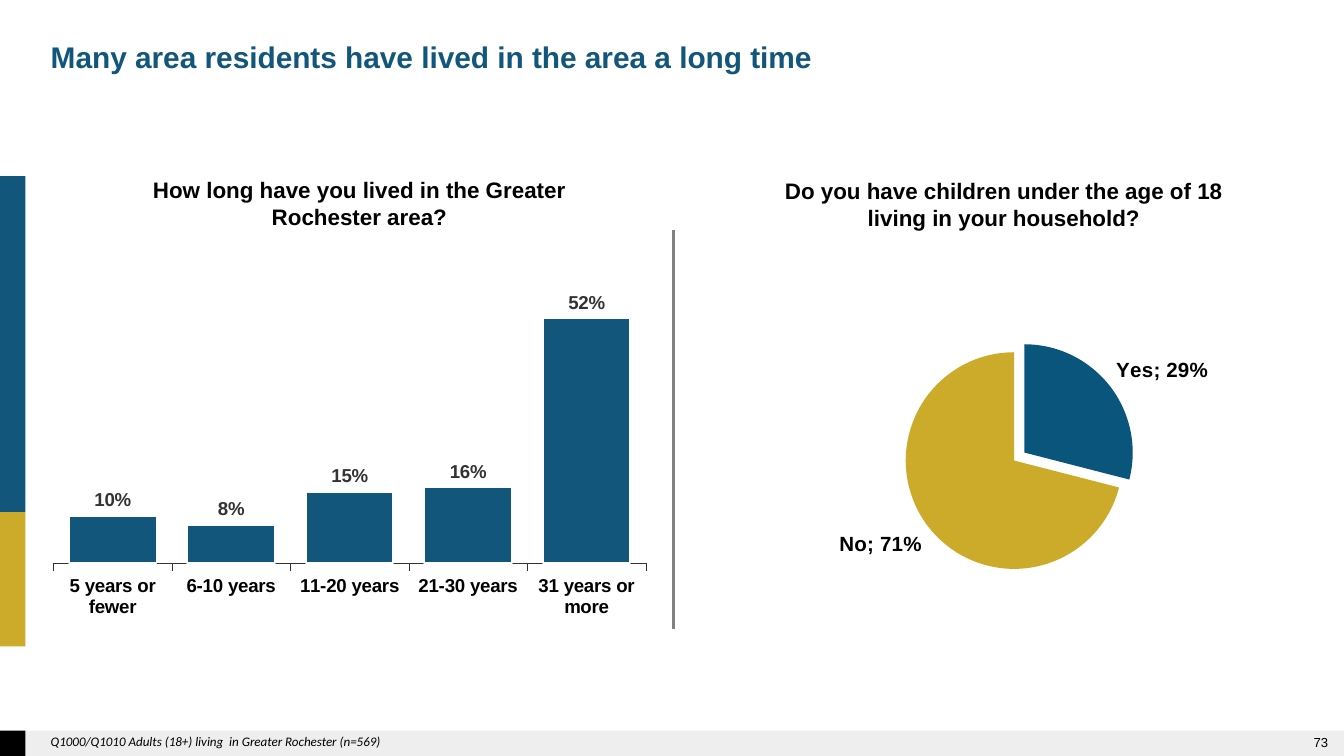
from lxml import etree
from pptx import Presentation
from pptx.chart.data import CategoryChartData
from pptx.dml.color import RGBColor
from pptx.enum.chart import XL_CHART_TYPE as ChartType, XL_LABEL_POSITION as LabelPosition
from pptx.enum.chart import XL_TICK_MARK as TickMark
from pptx.enum.shapes import MSO_CONNECTOR as Connector, MSO_SHAPE as Shape
from pptx.enum.text import MSO_ANCHOR as Anchor, PP_ALIGN as Align
from pptx.oxml import parse_xml
from pptx.oxml.ns import nsdecls, qn
from pptx.util import Cm, Pt

COLORS = {
    "blue": "12567C",
    "pie blue": "09557C",
    "gold": "CCAB2B",
    "black": "000000",
    "white": "FFFFFF",
    "dark gray": "333333",
    "footer": "595959",
    "divider": "808080",
}


class SlideBuilder:
    """Holds the style and the current slide, and draws each kind of element."""

    def __init__(self, slide, font="Arial"):
        self.slide = slide
        self.font = font

    def color(self, name):
        return RGBColor.from_string(COLORS[name])

    def paint(self, fill, name):
        fill.solid()
        fill.fore_color.rgb = self.color(name)

    def style(self, font, size, color="black", bold=False, italic=False, name=None):
        font.name = name or self.font
        font.size = Pt(size)
        font.bold = bold
        font.italic = italic
        font.color.rgb = self.color(color)

    def box(self, left, top, width, height, color, opacity=None):
        shape = self.slide.shapes.add_shape(
            Shape.RECTANGLE, Cm(left), Cm(top), Cm(width), Cm(height))
        shape.shadow.inherit = False
        shape.line.fill.background()
        self.paint(shape.fill, color)
        if opacity:
            tint = shape.fill._xPr.find(f".//{qn('a:srgbClr')}")
            etree.SubElement(tint, qn("a:alpha")).set("val", str(opacity * 1000))

    def text(self, words, left, top, width, height, size,
             align=Align.LEFT, anchor=Anchor.TOP, **style):
        shape = self.slide.shapes.add_textbox(Cm(left), Cm(top), Cm(width), Cm(height))
        frame = shape.text_frame
        frame.word_wrap = True
        frame.vertical_anchor = anchor
        paragraph = frame.paragraphs[0]
        paragraph.text = words
        paragraph.alignment = align
        self.style(paragraph.font, size, **style)

    def divider(self, x, top, bottom):
        line = self.slide.shapes.add_connector(
            Connector.STRAIGHT, Cm(x), Cm(top), Cm(x), Cm(bottom))
        line.line.color.rgb = self.color("divider")
        line.line.width = Pt(2)
        etree.SubElement(line._element.spPr, qn("a:effectLst"))

    def chart(self, kind, shares, place, plot_area, label_size, label_color):
        data = CategoryChartData(number_format="0%")
        data.categories = list(shares)
        data.add_series("Series 1", list(shares.values()))
        frame = self.slide.shapes.add_chart(kind, *map(Cm, place), data)
        chart = frame.chart
        chart.has_legend = False
        chart.has_title = False
        self.style(chart.font, label_size, label_color, bold=True)
        self.place_plot(chart, plot_area)
        series = chart.plots[0].series[0]
        labels = series.data_labels
        labels.show_value = True
        labels.number_format = "0%"
        labels.number_format_is_linked = False
        labels.position = LabelPosition.OUTSIDE_END
        self.style(labels.font, label_size, label_color, bold=True)
        return chart, series, labels

    def place_plot(self, chart, plot_area):
        area = chart._chartSpace.chart.plotArea
        for layout in area.findall(qn("c:layout")):
            area.remove(layout)
        sizes = "".join(f'<c:{key} val="{value}"/>' for key, value in zip("xywh", plot_area))
        area.insert(0, parse_xml(
            f'<c:layout {nsdecls("c")}><c:manualLayout><c:layoutTarget val="inner"/>'
            f'<c:xMode val="edge"/><c:yMode val="edge"/>{sizes}'
            '</c:manualLayout></c:layout>'))

    def column_chart(self, shares, place, plot_area):
        chart, series, _ = self.chart(
            ChartType.COLUMN_CLUSTERED, shares, place, plot_area, 10, "dark gray")
        chart.plots[0].gap_width = 35
        chart.plots[0].vary_by_categories = False
        self.paint(series.format.fill, "blue")
        series.format.line.color.rgb = self.color("white")
        series.format.line.width = Pt(1)
        values = chart.value_axis
        values.minimum_scale, values.maximum_scale, values.major_unit = 0, 0.6, 0.25
        values.has_major_gridlines = False
        values.visible = False
        categories = chart.category_axis
        categories.major_tick_mark = TickMark.OUTSIDE
        categories.format.line.color.rgb = self.color("dark gray")
        categories.format.line.width = Pt(0.25)
        self.style(categories.tick_labels.font, 10, bold=True)

    def pie_chart(self, shares, place, plot_area, colors, explosion):
        _, series, labels = self.chart(
            ChartType.PIE, shares, place, plot_area, 11, "black")
        labels.show_category_name = True
        separator = parse_xml(f'<c:separator {nsdecls("c")}>; </c:separator>')
        labels._element.insert_element_before(separator, "c:showLeaderLines")
        for index, color in enumerate(colors):
            self.paint(series.points[index].format.fill, color)
        series._element.insert_element_before(
            parse_xml(f'<c:explosion {nsdecls("c")} val="{explosion}"/>'), "c:dPt")


def main():
    presentation = Presentation()
    presentation.slide_width, presentation.slide_height = Cm(25.4), Cm(14.29)
    builder = SlideBuilder(presentation.slides.add_slide(presentation.slide_layouts[6]))

    builder.box(0, 13.81, 25.4, 0.48, "footer", opacity=10)
    builder.box(0, 3.33, 0.48, 6.35, "blue")
    builder.box(0, 9.68, 0.48, 2.54, "gold")
    builder.box(0, 13.81, 0.48, 0.48, "black")

    builder.text("Many area residents have lived in the area a long time",
                 0.71, 0.61, 21.64, 1.27, 16, color="blue", bold=True)
    builder.text("73", 19.43, 13.82, 5.92, 0.43, 7, Align.RIGHT, Anchor.MIDDLE)
    builder.text("Q1000/Q1010 Adults (18+) living  in Greater Rochester (n=569)",
                 0.71, 13.74, 16.71, 0.56, 7, italic=True, name="Calibri")
    builder.divider(12.73, 4.34, 11.89)

    builder.text("How long have you lived in the Greater Rochester area?",
                 2.31, 3.2, 8.97, 1.27, 12, Align.CENTER, bold=True)
    builder.column_chart(
        {"5 years or fewer": 0.1, "6-10 years": 0.08, "11-20 years": 0.15,
         "21-30 years": 0.16, "31 years or more": 0.52},
        (0.28, 5.31, 12.17, 6.58), (0.06, 0, 0.92, 0.81))

    builder.text("Do you have children under the age of 18 living in your household?",
                 14.2, 3.23, 9.55, 1.27, 12, Align.CENTER, bold=True)
    builder.pie_chart({"Yes": 0.29, "No": 0.71}, (14.3, 4.83, 10.34, 6.5),
                      (0.27, 0.25, 0.42, 0.67), ("pie blue", "gold"), explosion=6)

    presentation.save("out.pptx")


if __name__ == "__main__":
    main()
